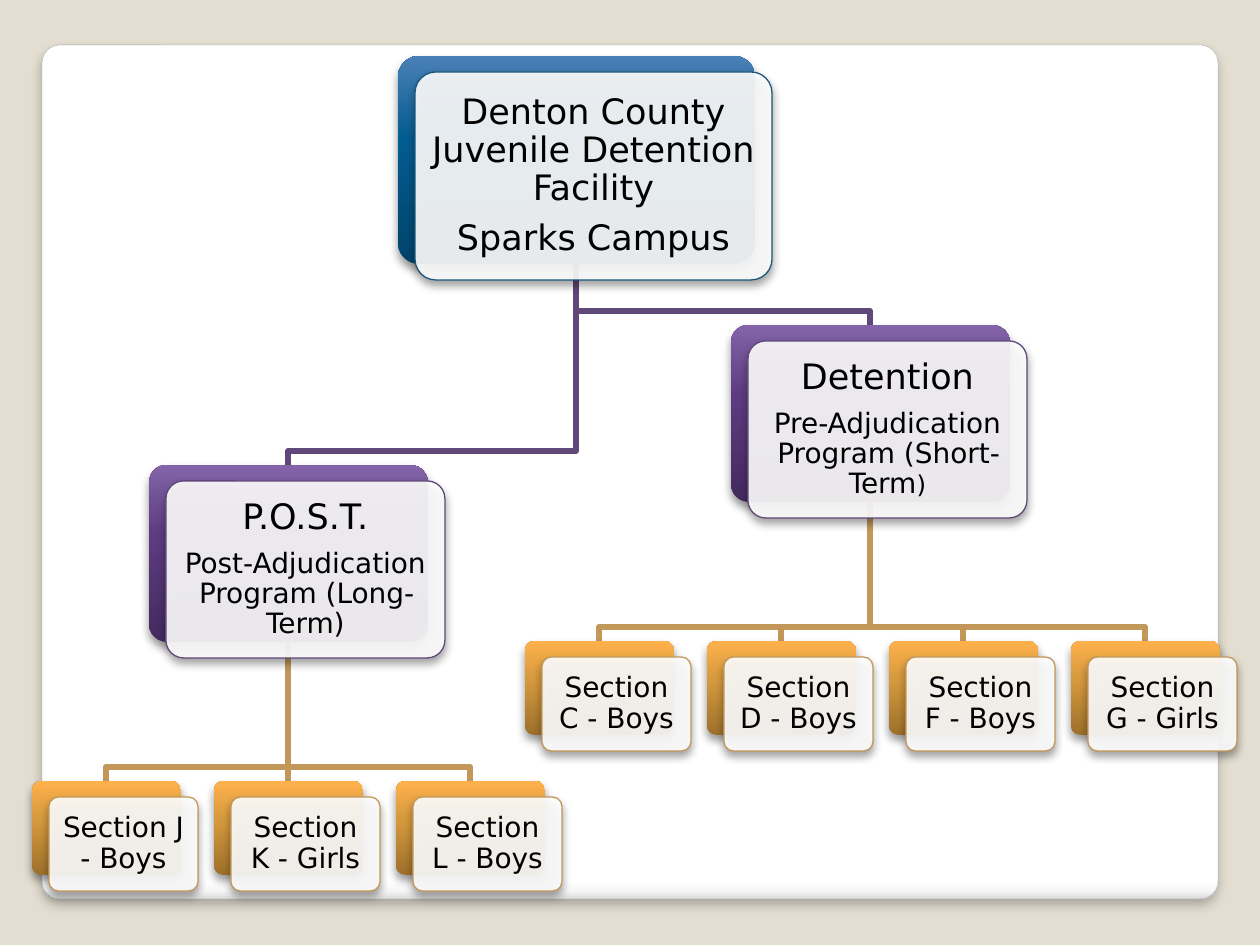
from lxml.etree import SubElement
from pptx import Presentation
from pptx.dml.color import RGBColor
from pptx.enum.shapes import MSO_CONNECTOR as CONNECTOR, MSO_SHAPE as SHAPE
from pptx.enum.text import MSO_ANCHOR as ANCHOR, PP_ALIGN as ALIGN
from pptx.oxml.ns import qn
from pptx.util import Pt

SCALE = 914400 / 126
FONT = "DejaVu Sans"
COLORS = {"background": "E3DED1", "panel edge": "A4A4A4", "card": "FFFFFF",
          "shadow": "000000", "text": "000000"}
PANEL_STOPS = [(0, "FFFFFF"), (98, "FFFFFF"), (99, "F7F7F7"), (100, "DADADA")]
LEVELS = {
    "campus": {"size": (357, 208), "inset": 10, "edge": "1B587C",
               "stops": [(0, "00436A"), (60, "035C91"), (100, "4A80B7")]},
    "program": {"size": (279, 177), "inset": 10, "edge": "604878",
                "stops": [(0, "442A5E"), (60, "5E3B81"), (100, "8364A8")]},
    "section": {"size": (149, 94), "inset": 9, "edge": "C19859",
                "stops": [(0, "9D702B"), (60, "D69A3E"), (100, "FFB14C")]},
}
CAMPUS = {
    "at": (398, 56),
    "text": [[("Denton County Juvenile Detention Facility", 20)],
             [("Sparks Campus", 20)]],
}
PROGRAMS = [
    {"at": (149, 465), "sections_at": (32, 781),
     "text": [[("P.O.S.T.", 20)],
              [("Post-Adjudication Program (Long-Term)", 16)]],
     "sections": ["Section J - Boys", "Section K - Girls", "Section L - Boys"]},
    {"at": (731, 325), "sections_at": (525, 641),
     "text": [[("Detention", 20)],
              [("Pre-Adjudication Program (Short-Term", 16), (")", 14)]],
     "sections": ["Section C - Boys", "Section D - Boys",
                  "Section F - Boys", "Section G - Girls"]},
]
SECTION_STEP = 182
CARD_SHIFT = (17, 16)
ELBOW_RISE = 14
LINK_WIDTH = 3.35


def px(value):
    return round(value * SCALE)


def rgb(color):
    return RGBColor.from_string(color)


def add_shadow(shape, alpha, blur, distance):
    shape.shadow.inherit = False
    effects = shape.element.spPr.find(qn("a:effectLst"))
    outer = SubElement(effects, qn("a:outerShdw"), blurRad=str(Pt(blur)),
                       dist=str(Pt(distance)), dir="5400000", rotWithShape="0")
    tint = SubElement(outer, qn("a:srgbClr"), val=COLORS["shadow"])
    SubElement(tint, qn("a:alpha"), val=str(alpha * 1000))


def fill_gradient(shape, stops, angle):
    shape.fill.gradient()
    shape.fill.gradient_angle = angle
    stop_list = shape.element.spPr.find(qn("a:gradFill")).find(qn("a:gsLst"))
    for stop in list(stop_list):
        stop_list.remove(stop)
    for position, color in stops:
        stop = SubElement(stop_list, qn("a:gs"), pos=str(position * 1000))
        SubElement(stop, qn("a:srgbClr"), val=color)


def add_round_box(shapes, at, size, corner):
    box = shapes.add_shape(SHAPE.ROUNDED_RECTANGLE, *map(px, (*at, *size)))
    box.adjustments[0] = corner
    return box


def write_text(shape, paragraphs, inset, color=COLORS["text"], font=FONT):
    frame = shape.text_frame
    frame.word_wrap = True
    frame.vertical_anchor = ANCHOR.MIDDLE
    frame.margin_left = frame.margin_right = px(inset)
    frame.margin_top = frame.margin_bottom = px(inset)
    for index, runs in enumerate(paragraphs):
        paragraph = frame.add_paragraph() if index else frame.paragraphs[0]
        paragraph.alignment = ALIGN.CENTER
        paragraph.line_spacing = 0.9
        paragraph.space_after = Pt(round(runs[0][1] * 0.35, 1))
        for words, size in runs:
            run = paragraph.add_run()
            run.text = words
            run.font.name = font
            run.font.size = Pt(size)
            run.font.color.rgb = rgb(color)


def add_node(shapes, at, level, paragraphs):
    style = LEVELS[level]
    back = add_round_box(shapes, at, style["size"], 0.1)
    fill_gradient(back, style["stops"], 90)
    back.line.fill.background()
    add_shadow(back, 40, 5.2, 3)
    card_at = [start + shift for start, shift in zip(at, CARD_SHIFT)]
    card = add_round_box(shapes, card_at, style["size"], 0.1)
    card.fill.solid()
    card.fill.fore_color.rgb = rgb(COLORS["card"])
    tint = card.element.spPr.find(qn("a:solidFill"))[0]
    SubElement(tint, qn("a:alpha"), val="90000")
    card.line.color.rgb = rgb(style["edge"])
    card.line.width = Pt(0.75)
    add_shadow(card, 40, 5.2, 3)
    write_text(card, paragraphs, inset=style["inset"])


def add_link(shapes, parent_at, parent_level, child_at, child_level):
    parent_width, parent_height = LEVELS[parent_level]["size"]
    x1 = parent_at[0] + parent_width // 2
    y1 = parent_at[1] + parent_height
    x2 = child_at[0] + LEVELS[child_level]["size"][0] // 2
    y2 = child_at[1]
    if x1 == x2:
        link = shapes.add_connector(CONNECTOR.STRAIGHT, *map(px, (x1, y1, x2, y2)))
        SubElement(link.element.spPr, qn("a:effectLst"))
    else:
        elbow = y2 - ELBOW_RISE
        outline = shapes.build_freeform(px(x1), px(y1))
        corners = [(x1, elbow), (x2, elbow), (x2, y2)]
        outline.add_line_segments([(px(x), px(y)) for x, y in corners], close=False)
        link = outline.convert_to_shape()
        link.fill.background()
        link.shadow.inherit = False
    link.line.color.rgb = rgb(LEVELS[child_level]["edge"])
    link.line.width = Pt(LINK_WIDTH)


def main():
    deck = Presentation()
    deck.slide_width, deck.slide_height = px(1260), px(945)
    slide = deck.slides.add_slide(deck.slide_layouts[6])
    slide.background.fill.solid()
    slide.background.fill.fore_color.rgb = rgb(COLORS["background"])
    shapes = slide.shapes

    panel = add_round_box(shapes, (42, 45), (1176, 854), 0.021)
    fill_gradient(panel, PANEL_STOPS, 270)
    panel.line.color.rgb = rgb(COLORS["panel edge"])
    panel.line.width = Pt(0.16)
    add_shadow(panel, 25, 6, 4)

    nodes = [(CAMPUS["at"], "campus", CAMPUS["text"])]
    for program in PROGRAMS:
        add_link(shapes, CAMPUS["at"], "campus", program["at"], "program")
        nodes.append((program["at"], "program", program["text"]))
        left, top = program["sections_at"]
        for index, section in enumerate(program["sections"]):
            section_at = (left + index * SECTION_STEP, top)
            add_link(shapes, program["at"], "program", section_at, "section")
            nodes.append((section_at, "section", [[(section, 16)]]))
    for node in nodes:
        add_node(shapes, *node)

    deck.save("out.pptx")


if __name__ == "__main__":
    main()
